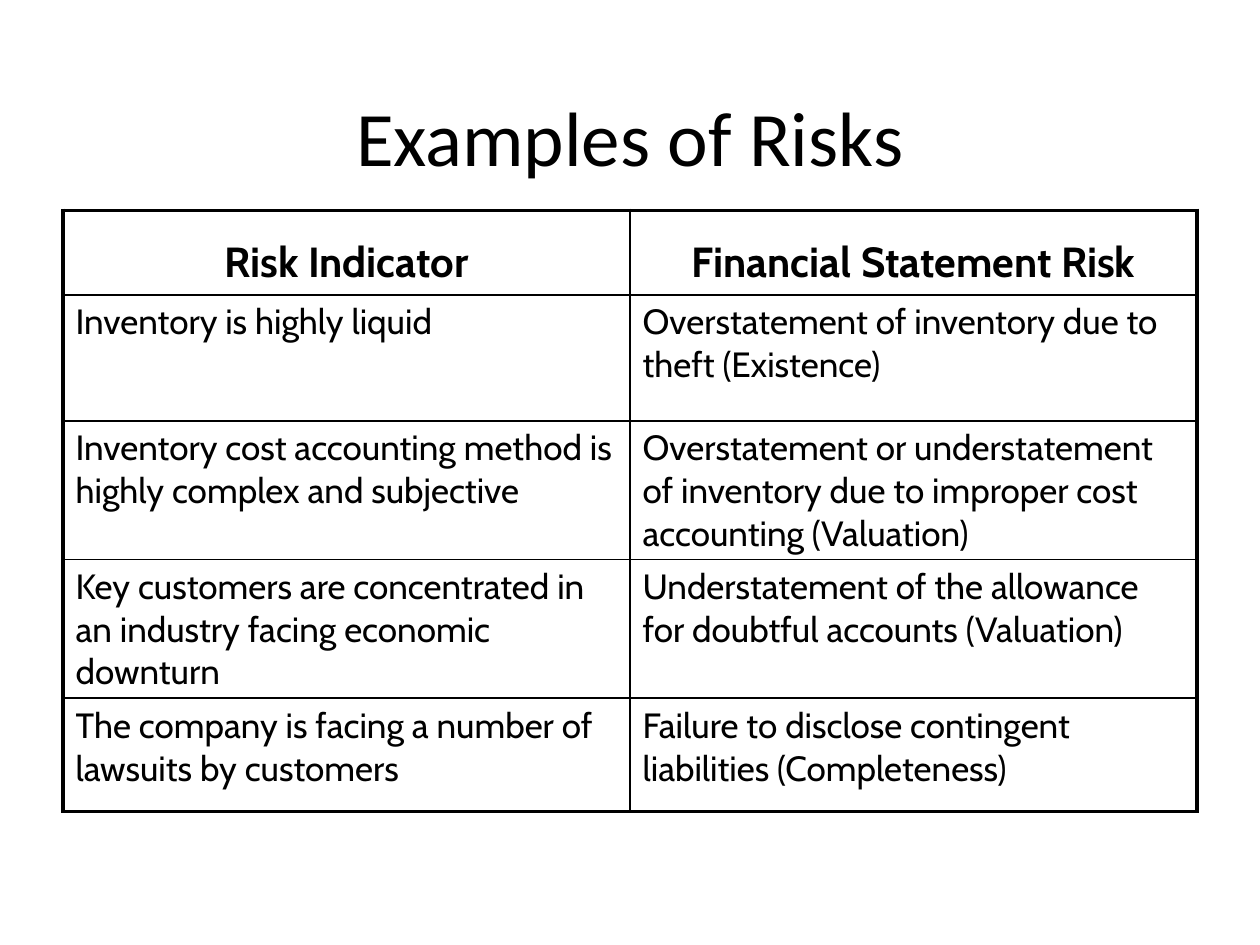
"""Build a slide with a table of risk indicators and financial statement risks."""
from lxml.etree import SubElement
from pptx import Presentation
from pptx.dml.color import RGBColor
from pptx.enum.text import MSO_ANCHOR, PP_ALIGN
from pptx.oxml.ns import qn
from pptx.util import Inches, Pt

TITLE = "Examples of Risks"
ROWS = [
    ("Risk Indicator", "Financial Statement Risk"),
    ("Inventory is highly liquid",
     "Overstatement of inventory due to theft (Existence)"),
    ("Inventory cost accounting method is highly complex and subjective",
     "Overstatement or understatement of inventory due to improper cost accounting (Valuation)"),
    ("Key customers are concentrated in an industry facing economic downturn",
     "Understatement of the allowance for doubtful accounts (Valuation)"),
    ("The company is facing a number of lawsuits by customers",
     "Failure to disclose contingent liabilities (Completeness)"),
]
ROW_HEIGHTS = [0.67, 1, 1.1, 1.1, 0.9]
COLUMN_WIDTH = 4.5
COLORS = {"ink": "000000", "paper": "FFFFFF"}
OUTER, INNER = 2.25, 1
FORMATS = {
    "title": {"name": "Calibri", "size": Pt(44), "bold": False},
    "header": {"name": "Cabin", "size": Pt(24), "bold": True},
    "body": {"name": "Cabin", "size": Pt(20), "bold": False},
}


def write(paragraph, text, style, align):
    paragraph.alignment = align
    span = paragraph.add_run()
    span.text = text
    for name, value in FORMATS[style].items():
        setattr(span.font, name, value)
    span.font.color.rgb = RGBColor.from_string(COLORS["ink"])


def space_before(paragraph, percent):
    spacing = SubElement(paragraph._p.get_or_add_pPr(), qn("a:spcBef"))
    SubElement(spacing, qn("a:spcPct"), val=str(percent * 1000))


def add_borders(cell, outer_sides):
    properties = cell._tc.get_or_add_tcPr()
    for side, is_outer in outer_sides.items():
        width = Pt(OUTER if is_outer else INNER)
        line = SubElement(properties, qn(f"a:ln{side}"), w=str(width))
        fill = SubElement(line, qn("a:solidFill"))
        SubElement(fill, qn("a:srgbClr"), val=COLORS["ink"])


def add_title(page):
    box = page.shapes.add_textbox(Inches(0.5), Inches(0.32), Inches(9), Inches(1.51))
    frame = box.text_frame
    frame.word_wrap = True
    frame.vertical_anchor = MSO_ANCHOR.MIDDLE
    write(frame.paragraphs[0], TITLE, "title", PP_ALIGN.CENTER)


def add_risk_table(page):
    column_count = len(ROWS[0])
    table = page.shapes.add_table(
        len(ROWS), column_count, Inches(0.5), Inches(1.67),
        Inches(COLUMN_WIDTH * column_count), Inches(sum(ROW_HEIGHTS))).table
    table.first_row = table.horz_banding = False
    for column in table.columns:
        column.width = Inches(COLUMN_WIDTH)
    for r, (texts, height) in enumerate(zip(ROWS, ROW_HEIGHTS)):
        table.rows[r].height = Inches(height)
        is_header = r == 0
        for c, text in enumerate(texts):
            cell = table.cell(r, c)
            add_borders(cell, {"L": c == 0, "R": c == column_count - 1,
                               "T": is_header, "B": r == len(ROWS) - 1})
            cell.fill.background()
            cell.vertical_anchor = MSO_ANCHOR.BOTTOM if is_header else MSO_ANCHOR.TOP
            paragraph = cell.text_frame.paragraphs[0]
            write(paragraph, text, "header" if is_header else "body",
                  PP_ALIGN.CENTER if is_header else PP_ALIGN.LEFT)
            space_before(paragraph, 20)


def main():
    deck = Presentation()
    deck.slide_width, deck.slide_height = Inches(10), Inches(7.5)
    page = deck.slides.add_slide(deck.slide_layouts[6])
    page.background.fill.solid()
    page.background.fill.fore_color.rgb = RGBColor.from_string(COLORS["paper"])
    add_title(page)
    add_risk_table(page)
    deck.save("out.pptx")


if __name__ == "__main__":
    main()
